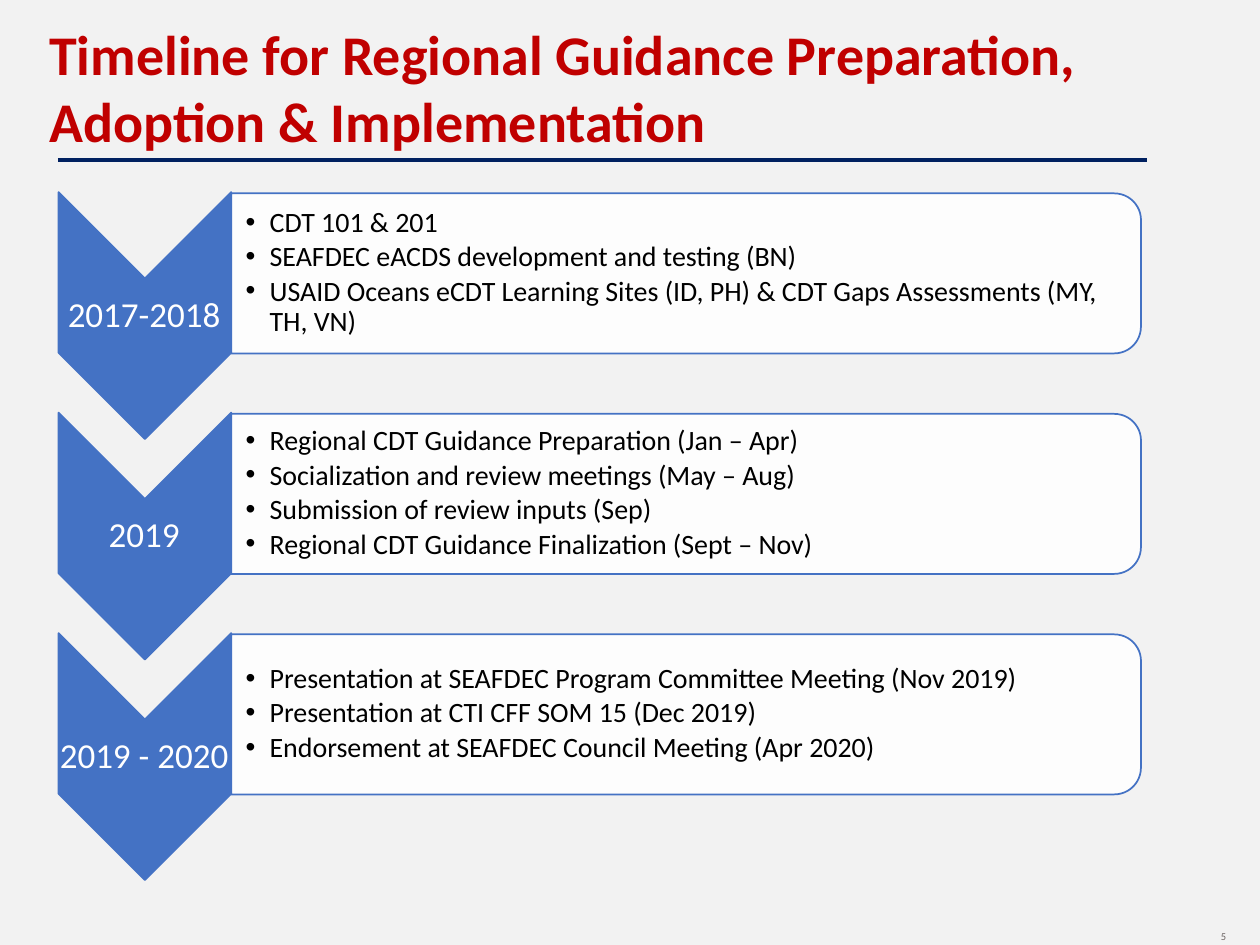
from dataclasses import dataclass

from lxml.etree import SubElement
from pptx import Presentation
from pptx.dml.color import RGBColor
from pptx.enum.shapes import MSO_CONNECTOR, MSO_SHAPE
from pptx.enum.text import MSO_ANCHOR, MSO_AUTO_SIZE, PP_ALIGN
from pptx.oxml.ns import qn
from pptx.util import Inches, Pt


@dataclass(frozen=True)
class Theme:
    font: str = "Calibri"
    background: RGBColor = RGBColor(0xF2, 0xF2, 0xF2)
    title: RGBColor = RGBColor(0xC0, 0x00, 0x00)
    rule: RGBColor = RGBColor(0x00, 0x20, 0x60)
    accent: RGBColor = RGBColor(0x44, 0x72, 0xC4)
    white: RGBColor = RGBColor(0xFF, 0xFF, 0xFF)
    ink: RGBColor = RGBColor(0x00, 0x00, 0x00)
    number: RGBColor = RGBColor(0x6C, 0x64, 0x63)
    title_size: Pt = Pt(32)
    period_size: Pt = Pt(20)
    step_size: Pt = Pt(16)
    number_size: Pt = Pt(6)


theme = Theme()

PHASES = [
    ("2017-2018", [
        "CDT 101 & 201",
        "SEAFDEC eACDS development and testing (BN)",
        "USAID Oceans eCDT Learning Sites (ID, PH) & CDT Gaps Assessments (MY, TH, VN)",
    ]),
    ("2019", [
        "Regional CDT Guidance Preparation (Jan – Apr)",
        "Socialization and review meetings (May – Aug)",
        "Submission of review inputs (Sep)",
        "Regional CDT Guidance Finalization (Sept – Nov)",
    ]),
    ("2019 - 2020", [
        "Presentation at SEAFDEC Program Committee Meeting (Nov 2019)",
        "Presentation at CTI CFF SOM 15 (Dec 2019)",
        "Endorsement at SEAFDEC Council Meeting (Apr 2020)",
    ]),
]


def write(holder, box, lines, size, color, bold=False, bullet=False,
          frame_format=None, paragraph_format=None):
    """Place a text holder and fill it with one paragraph per line."""
    holder.left, holder.top, holder.width, holder.height = map(Inches, box)
    frame = holder.text_frame
    frame.text = "\n".join(lines)
    frame_values = {"word_wrap": True, "auto_size": MSO_AUTO_SIZE.NONE,
                    "vertical_anchor": MSO_ANCHOR.MIDDLE, **(frame_format or {})}
    for key, value in frame_values.items():
        setattr(frame, key, value)
    for paragraph in frame.paragraphs:
        paragraph_values = {"alignment": PP_ALIGN.LEFT, "space_before": Pt(0),
                            **(paragraph_format or {})}
        for key, value in paragraph_values.items():
            setattr(paragraph, key, value)
        if bullet:
            properties = paragraph._p.get_or_add_pPr()
            properties.set("marL", str(Inches(0.19)))
            properties.set("indent", str(Inches(-0.19)))
            SubElement(properties, qn("a:buFont"), typeface="Arial")
            SubElement(properties, qn("a:buChar"), char="•")
        font_values = {"name": theme.font, "size": size, "bold": bold}
        for run in paragraph.runs:
            for key, value in font_values.items():
                setattr(run.font, key, value)
            run.font.color.rgb = color


def add_turned(kind, box, fill):
    """Add an outlined shape turned a quarter clockwise."""
    shape = slide.shapes.add_shape(kind, *map(Inches, box))
    shape.rotation = 90
    shape.shadow.inherit = False
    shape.fill.solid()
    shape.fill.fore_color.rgb = fill
    shape.line.color.rgb = theme.accent
    shape.line.width = Pt(1)
    return shape


# Slide: the comparison layout supplies the title and the phase lists
deck = Presentation()
deck.slide_width, deck.slide_height = Inches(10), Inches(7.5)
slide = deck.slides.add_slide(deck.slide_layouts[4])
slide.background.fill.solid()
slide.background.fill.fore_color.rgb = theme.background
phase_lists = [holder for holder in slide.placeholders
               if holder.placeholder_format.idx > 0]
for unused in phase_lists[len(PHASES):]:
    unused._element.getparent().remove(unused._element)

# Page number
write(slide.shapes.add_textbox(0, 0, 0, 0), (7.5, 7.33, 2.33, 0.2), ["5"],
      theme.number_size, theme.number,
      paragraph_format={"alignment": PP_ALIGN.RIGHT})

# Title and rule
write(slide.shapes.title, (0.29, 0.09, 9.41, 1.18),
      ["Timeline for Regional Guidance Preparation, Adoption & Implementation"],
      theme.title_size, theme.title, bold=True,
      frame_format={"vertical_anchor": MSO_ANCHOR.BOTTOM})
title_rule = slide.shapes.add_connector(
    MSO_CONNECTOR.STRAIGHT, Inches(0.46), Inches(1.27), Inches(9.1), Inches(1.27))
title_rule.line.color.rgb = theme.rule
title_rule.line.width = Pt(2.25)
SubElement(title_rule._element.spPr, qn("a:effectLst"))

# Phases: chevron with its period, panel with its steps
PITCH = 1.75
tight = dict.fromkeys(
    ("margin_left", "margin_top", "margin_right", "margin_bottom"), Inches(0.01))
for index, ((period, steps), phase_list) in enumerate(zip(PHASES, phase_lists)):
    offset = index * PITCH
    add_turned(MSO_SHAPE.CHEVRON, (0.17, 1.82 + offset, 1.96, 1.37), theme.accent)
    write(slide.shapes.add_textbox(0, 0, 0, 0), (0.46, 2.21 + offset, 1.37, 0.59),
          [period], theme.period_size, theme.white, frame_format=tight,
          paragraph_format={"alignment": PP_ALIGN.CENTER, "line_spacing": 0.9})

    panel = add_turned(MSO_SHAPE.ROUND_2_SAME_RECTANGLE,
                       (4.81, -1.44 + offset, 1.27, 7.22), theme.white)
    panel_color = panel._element.spPr.find(qn("a:solidFill"))[0]
    SubElement(panel_color, qn("a:alpha"), val="90000")

    # Bring the list in front of its panel
    panel._element.addnext(phase_list._element)
    write(phase_list, (1.83, 1.59 + offset, 7.15, 1.15), steps,
          theme.step_size, theme.ink, bullet=True,
          frame_format={**tight, "margin_left": Inches(0.12)},
          paragraph_format={"line_spacing": 0.9, "space_after": Pt(2.4)})

deck.save("out.pptx")
